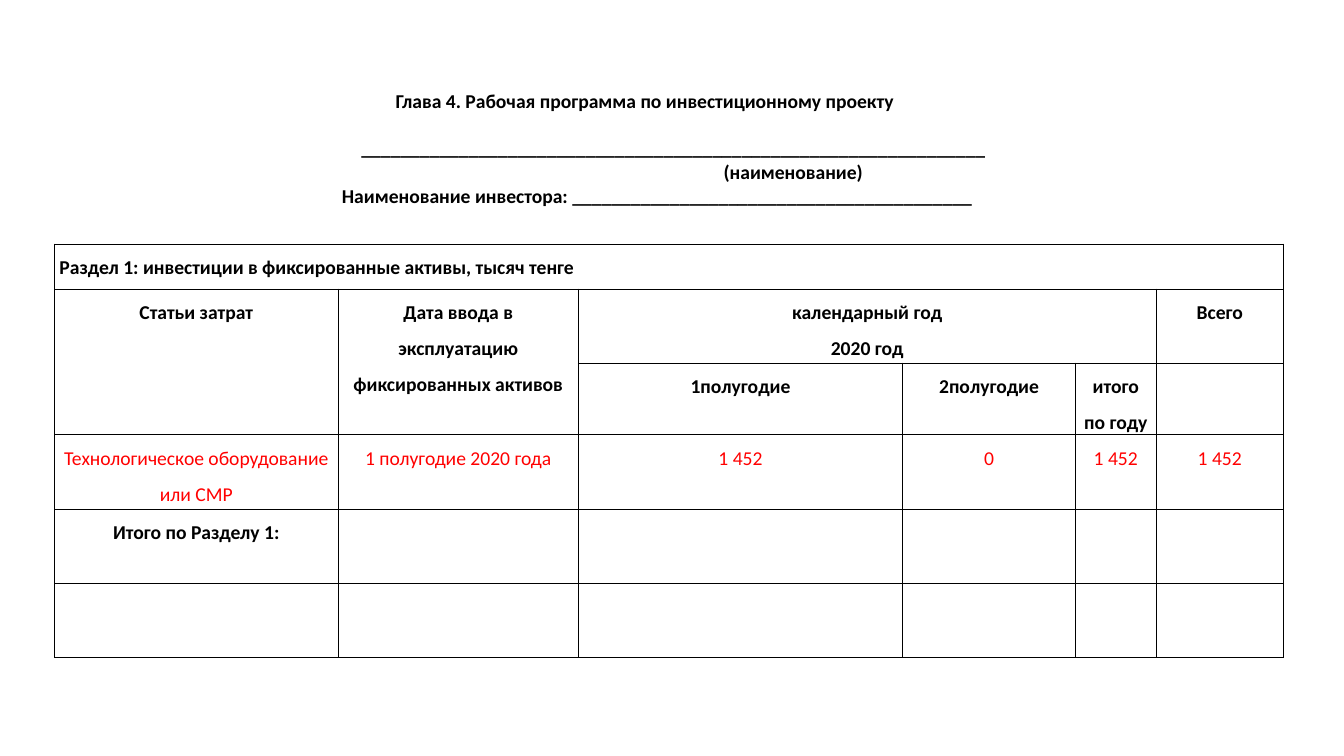
from lxml import etree
from pptx import Presentation
from pptx.dml.color import RGBColor
from pptx.enum.text import MSO_ANCHOR, MSO_AUTO_SIZE, PP_ALIGN
from pptx.oxml.ns import qn
from pptx.util import Inches, Pt

LEFT, MID, TOP = PP_ALIGN.LEFT, PP_ALIGN.CENTER, MSO_ANCHOR.TOP
FIXED = MSO_AUTO_SIZE.NONE
BLACK = RGBColor(0, 0, 0)
RED = RGBColor(255, 0, 0)
FONT, SIZE = "Calibri", Pt(28)
WIDE, HIGH = Inches(26.67), Inches(15)

HEAD = [
    ("Глава 4. Рабочая программа по инвестиционному проекту", 0, 0),
    ("_" * 64, 1.14, 34),
    ("(наименование)", 5.9, 0),
    ("Наименование инвестора: " + "_" * 41, 0.49, 0),
]
COLS = [5.63, 4.77, 6.44, 3.43, 1.6, 2.53]
ROWS = [0.89, 1.47, 1.39, 1.47, 1.47, 1.47]
SPANS = [(0, 0, 0, 5), (1, 0, 2, 0), (1, 1, 2, 1), (1, 2, 1, 4)]
CELLS = [
    ["Раздел 1: инвестиции в фиксированные активы, тысяч тенге"],
    ["Статьи затрат", "Дата ввода в эксплуатацию фиксированных активов",
     "календарный год\n2020 год", "", "", "Всего"],
    ["", "", "1полугодие", "2полугодие", "итого по году"],
    ["Технологическое оборудование или СМР", "1 полугодие 2020 года",
     "1 452", "0", "1 452", "1 452"],
    ["Итого по Разделу 1:"],
]


def area(left, top, width, height):
    """Turn percentages of the slide into a box."""
    return [int(side * part / 100) for side, part in
            zip((WIDE, HIGH, WIDE, HIGH), (left, top, width, height))]


def write(para, text, align=MID, color=BLACK, bold=True):
    """Add one styled run to a paragraph."""
    para.alignment = align
    run = para.add_run()
    run.text = text
    font = run.font
    font.name, font.size, font.bold = FONT, SIZE, bold
    font.color.rgb = color


def fill_lines(frame, count):
    """Yield the given number of paragraphs of a text frame."""
    for pos in range(count):
        yield frame.add_paragraph() if pos else frame.paragraphs[0]


def add_head(slide, box):
    """Place the chapter heading with its blank lines to fill in."""
    shape = slide.shapes.title
    shape.left, shape.top, shape.width, shape.height = box
    frame = shape.text_frame
    frame.word_wrap, frame.auto_size = True, FIXED
    frame.vertical_anchor = TOP
    frame.margin_top = int(box[3] * 0.14)
    for para, (text, indent, gap) in zip(fill_lines(frame, len(HEAD)), HEAD):
        write(para, text)
        para.space_before = Pt(gap)
        props = para._p.get_or_add_pPr()
        props.set("marL", str(Inches(indent)))
        props.set("indent", "0")


def add_rules(cell):
    """Draw thin black borders on all four sides of a cell."""
    props = cell._tc.get_or_add_tcPr()
    for pos, side in enumerate("LRTB"):
        line = etree.Element(qn("a:ln" + side), w=str(Pt(1)))
        fill = etree.SubElement(line, qn("a:solidFill"))
        etree.SubElement(fill, qn("a:srgbClr"), val=str(BLACK))
        props.insert(pos, line)


def fill_cell(cell, text, align, color, bold):
    """Write the lines of a cell at one and a half spacing."""
    cell.margin_left = cell.margin_right = Inches(0.1)
    cell.margin_top = cell.margin_bottom = 0
    lines = text.split("\n")
    for para, line in zip(fill_lines(cell.text_frame, len(lines)), lines):
        write(para, line, align, color, bold)
        para.line_spacing = 1.5


def add_costs(slide, box):
    """Place the table of investment costs."""
    table = slide.shapes.add_table(len(ROWS), len(COLS), *box).table
    table.first_row = table.horz_banding = False
    for col, share in zip(table.columns, COLS):
        col.width = int(box[2] * share / sum(COLS))
    for row, share in zip(table.rows, ROWS):
        row.height = int(box[3] * share / sum(ROWS))
    for cell in table.iter_cells():
        cell.fill.background()
        add_rules(cell)
    for top, left, low, right in SPANS:
        table.cell(top, left).merge(table.cell(low, right))
    for row, texts in enumerate(CELLS):
        align = MID if row else LEFT
        color, bold = (RED, False) if row == 3 else (BLACK, True)
        for col, text in enumerate(texts):
            if text:
                fill_cell(table.cell(row, col), text, align, color, bold)


def main():
    """Build and save the slide."""
    deck = Presentation()
    deck.slide_width, deck.slide_height = WIDE, HIGH
    slide = deck.slides.add_slide(deck.slide_layouts.get_by_name("Title Only"))
    add_head(slide, area(4.05, 8.67, 87.81, 22.2))
    add_costs(slide, area(4.05, 32.27, 91.45, 54.4))
    deck.save("out.pptx")


if __name__ == "__main__":
    main()
